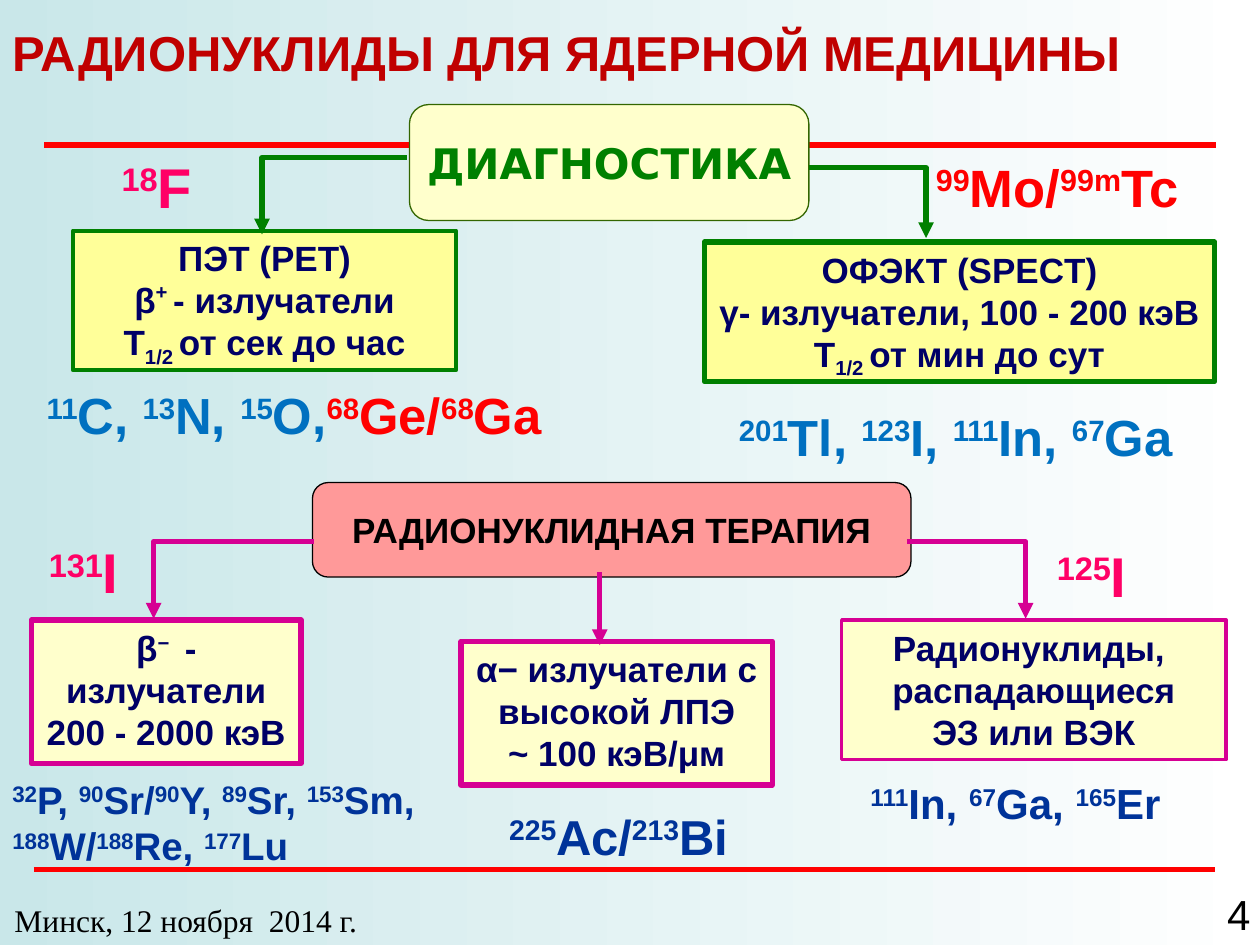
from pptx import Presentation
from pptx.dml.color import RGBColor
from pptx.enum.shapes import MSO_CONNECTOR as CONN, MSO_SHAPE as SHAPE
from pptx.enum.text import MSO_ANCHOR as ANCHOR, PP_ALIGN as ALIGN
from pptx.oxml.ns import qn
from pptx.util import Inches, Pt
from lxml.etree import SubElement

NAVY, BLUE, SKY = "000066", "003399", "0070C0"
RED, GREEN, MAGENTA, PINK = "FF0000", "008000", "D60093", "FF0066"
CREAM, YELLOW = "FFFFCC", "FFFF99"


def rgb(value):
    return RGBColor.from_string(value)


def add_run(p, text, size=20, color=NAVY, font="Arial", bold=True, base=0):
    r = p.add_run()
    r.text = text
    r.font.size, r.font.name, r.font.bold = Pt(size), font, bold
    r.font.color.rgb = rgb(color)
    if base:
        r.font._element.set("baseline", str(base * 1000))


def add_marked(p, text, sup=30, **fmt):
    for i, part in enumerate(text.split("^")):
        for j, piece in enumerate(part.split("_")):
            if piece:
                add_run(p, piece, base=sup if i % 2 else -25 if j % 2 else 0, **fmt)


class SlideBuilder:
    def __init__(self, prs):
        self.s = prs.slides.add_slide(prs.slide_layouts[5])
        self.shapes = self.s.shapes

    def background(self, *colors):
        fill = self.s.background.fill
        fill.gradient()
        fill.gradient_angle = 0
        for stop, color in zip(fill.gradient_stops, colors):
            stop.color.rgb = rgb(color)

    def fill_text(self, sp, lines, align=ALIGN.CENTER, anchor=ANCHOR.TOP, wrap=True, **fmt):
        tf = sp.text_frame
        tf.word_wrap, tf.vertical_anchor = wrap, anchor
        for i, line in enumerate(lines):
            p = tf.add_paragraph() if i else tf.paragraphs[0]
            p.alignment = align
            add_marked(p, line, **fmt)
        return tf.paragraphs[-1]

    def title(self, text, at, **fmt):
        sp = self.shapes.title
        sp.left, sp.top, sp.width, sp.height = map(Inches, at)
        self.fill_text(sp, [text], align=ALIGN.LEFT, **fmt)

    def text(self, text, at, **fmt):
        return self.fill_text(self.shapes.add_textbox(*map(Inches, at)), [text], **fmt)

    def box(self, lines, at, fill, line, weight, kind=SHAPE.RECTANGLE, **fmt):
        sp = self.shapes.add_shape(kind, *map(Inches, at))
        sp.shadow.inherit = False
        sp.fill.solid()
        sp.fill.fore_color.rgb = rgb(fill)
        sp.line.color.rgb = rgb(line)
        sp.line.width = Pt(weight)
        self.fill_text(sp, lines, **fmt)

    def heading(self, text, at, fill, line, **fmt):
        self.box([text], at, fill, line, 0.75, SHAPE.ROUNDED_RECTANGLE,
                 anchor=ANCHOR.MIDDLE, wrap=False, **fmt)

    def line(self, x1, y1, x2, y2, color, arrow=False):
        bent = arrow and x1 != x2
        c = self.shapes.add_connector(CONN.ELBOW if bent else CONN.STRAIGHT,
                                      *map(Inches, (x1, y1, x2, y2)))
        c.line.color.rgb = rgb(color)
        c.line.width = Pt(3)
        spPr = c._element.spPr
        if bent:
            spPr.find(qn("a:prstGeom")).set("prst", "bentConnector2")
        if arrow:
            SubElement(spPr.find(qn("a:ln")), qn("a:tailEnd")).set("type", "triangle")
        SubElement(spPr, qn("a:effectLst"))


def main():
    prs = Presentation()
    prs.slide_width, prs.slide_height = Inches(10), Inches(7.5)
    b = SlideBuilder(prs)
    b.background("C9E7E9", "FFFFFF")
    b.line(0.35, 1.15, 9.65, 1.15, RED)
    b.line(0.27, 6.9, 9.64, 6.9, RED)
    b.title("РАДИОНУКЛИДЫ ДЛЯ ЯДЕРНОЙ МЕДИЦИНЫ", (0, 0.13, 9.02, 0.57),
            size=28, color="C00000")

    b.heading("ДИАГНОСТИКА", (3.25, 0.83, 3.17, 0.92), CREAM, "336600",
              size=24, color=GREEN, font="DejaVu Sans")
    b.box(["ПЭТ (PET)", "β^+ ^- излучатели", "T_1/2 _от сек до час"],
          (0.58, 1.83, 3.04, 1.11), YELLOW, GREEN, 2.25, sup=40)
    b.box(["ОФЭКТ (SPECT)", "γ- излучатели, 100 - 200 кэВ", "T_1/2 _от мин до сут"],
          (5.59, 1.92, 4.05, 1.11), YELLOW, GREEN, 3, wrap=False)

    b.heading("РАДИОНУКЛИДНАЯ ТЕРАПИЯ", (2.48, 3.83, 4.75, 0.75), "FF9999", "000000",
              color="000000")
    b.box(["β^− ^ - излучатели", "200 - 2000 кэВ"],
          (0.25, 4.92, 2.14, 1.14), CREAM, MAGENTA, 3)
    b.box(["α− излучатели с", "высокой ЛПЭ", "~ 100 кэВ/μм"],
          (3.66, 5.09, 2.47, 1.14), CREAM, MAGENTA, 3, wrap=False)
    b.box(["Радионуклиды, ", "распадающиеся", "ЭЗ или ВЭК"],
          (6.68, 4.92, 3.05, 1.11), CREAM, MAGENTA, 2)

    for color, *ends in [
        (GREEN, 3.23, 1.25, 2.08, 1.86),
        (GREEN, 6.42, 1.33, 7.35, 1.89),
        (MAGENTA, 2.49, 4.3, 1.22, 4.91),
        (MAGENTA, 4.76, 4.54, 4.76, 5.12),
        (MAGENTA, 7.2, 4.3, 8.14, 4.91),
    ]:
        b.line(*ends, color, arrow=True)

    for text, at, size, color, align in [
        ("^201^Tl, ^123^I, ^111^In, ^67^Ga", (5.42, 3.17, 4.33, 0.58), 29, SKY, ALIGN.CENTER),
        ("^99^Mo/^99m^Tc", (7.33, 1.18, 2.67, 0.63), 30, RED, ALIGN.LEFT),
        ("^18^F", (0.58, 1.16, 1.33, 0.63), 32, PINK, ALIGN.CENTER),
        ("^131^I", (0, 4.22, 1.33, 0.63), 32, PINK, ALIGN.CENTER),
        ("^125^I", (8.08, 4.25, 1.17, 0.63), 32, PINK, ALIGN.CENTER),
        ("^32^Р, ^90^Sr/^90^Y, ^89^Sr, ^153^Sm, ^188^W/^188^Re, ^177^Lu",
         (0, 6.11, 3.66, 0.84), 22, BLUE, ALIGN.LEFT),
        ("^225^Ас/^213^Bi", (3.66, 6.35, 2.5, 0.57), 28, BLUE, ALIGN.CENTER),
        ("^111^In, ^67^Ga, ^165^Er", (6.81, 6.12, 2.99, 0.5), 24, BLUE, ALIGN.LEFT),
    ]:
        b.text(text, at, size=size, color=color, align=align)

    p = b.text("^11^С, ^13^N, ^15^О,", (0.17, 3, 4.33, 0.58), size=29, color=SKY)
    add_marked(p, "^68^Ge/^68^Ga", size=29, color=RED)

    b.text("4", (9.64, 7, 0.36, 0.5), size=24, color="000000", bold=False)
    b.text("Минск, 12 ноября  2014 г.", (0, 7.1, 2.95, 0.4), size=18, color="000000",
           font="Times New Roman", bold=False)
    prs.save("out.pptx")


if __name__ == "__main__":
    main()
